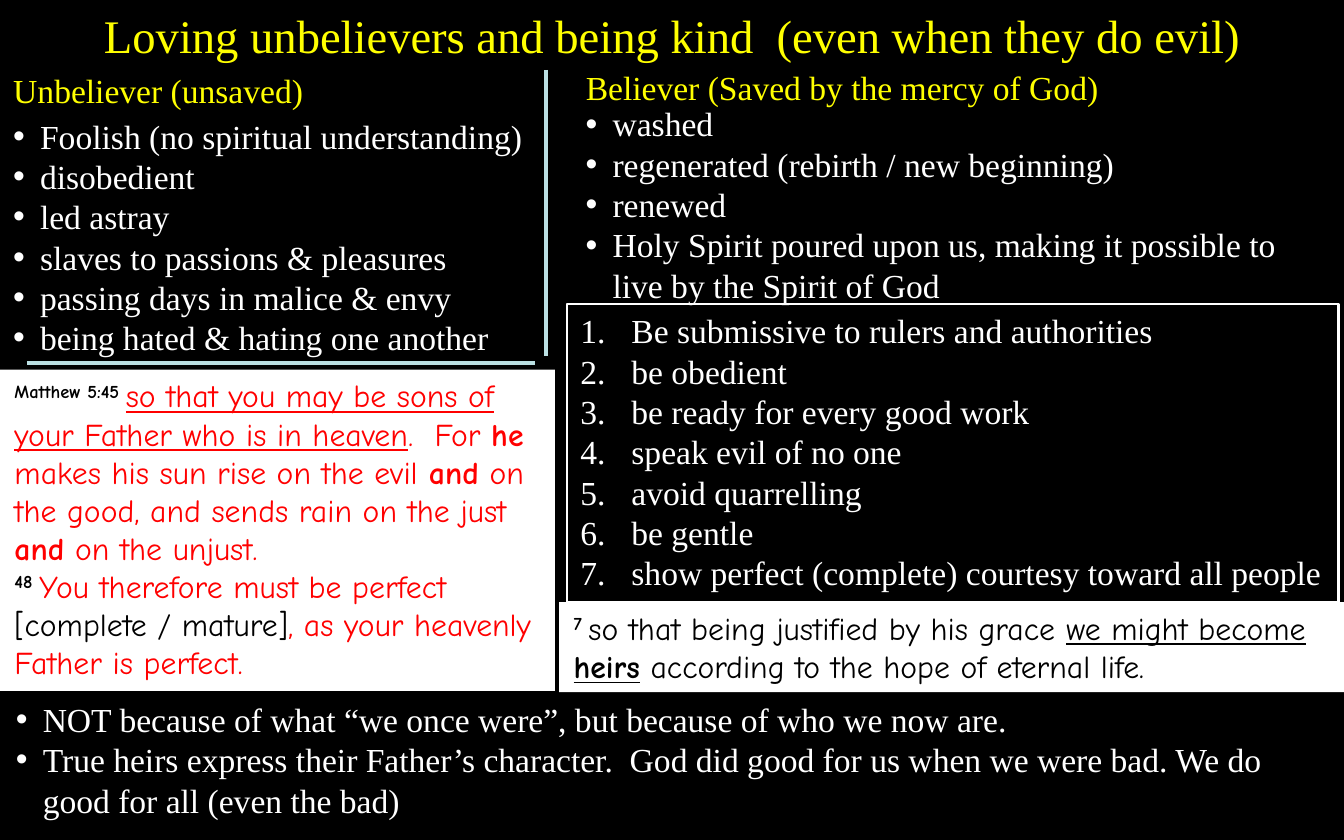
from lxml import etree
from pptx import Presentation
from pptx import util as u
from pptx.dml.color import RGBColor
from pptx.enum import shapes, text
from pptx.oxml import ns

WIDTH, HEIGHT = 10, 6.25
SERIF, COMIC = "Times New Roman", "Comic Neue"
BLACK, WHITE, YELLOW, RED, PALE = "000000", "FFFFFF", "FFFF00", "FF0000", "BBE0E3"

# Run formats for the verses
NUMBER = {"bold": True, "raised": True}
UNDER = {"underline": True}
BOLD = {"bold": True}

UNBELIEVER = ["Foolish (no spiritual understanding)", "disobedient", "led astray",
              "slaves to passions & pleasures", "passing days in malice & envy",
              "being hated & hating one another"]
BELIEVER = ["washed", "regenerated (rebirth / new beginning)", "renewed",
            "Holy Spirit poured upon us, making it possible to live by the Spirit of God"]
CONDUCT = ["Be submissive to rulers and authorities", "be obedient",
           "be ready for every good work", "speak evil of no one",
           "avoid quarrelling", "be gentle",
           "show perfect (complete) courtesy toward all people"]
REASONS = ["NOT because of what “we once were”, but because of who we now are.",
           "True heirs express their Father’s character.  God did good for us "
           "when we were bad. We do good for all (even the bad)"]
MATTHEW = [
    [("Matthew 5:45\u00a0", BLACK, NUMBER),
     ("so that you may be sons of your Father who is in heaven", RED, UNDER),
     (".  For ", RED, {}), ("he", RED, BOLD),
     (" makes his sun rise on the evil ", RED, {}), ("and", RED, BOLD),
     (" on the good, and sends rain on the just ", RED, {}), ("and", RED, BOLD),
     (" on the unjust.", RED, {})],
    [("48\u00a0", BLACK, NUMBER), ("You therefore must be perfect ", RED, {}),
     ("[complete / mature]", BLACK, {}),
     (", as your heavenly Father is perfect.", RED, {})]]
TITUS = [
    [("7\u00a0", BLACK, NUMBER), ("so that being justified by his grace ", BLACK, {}),
     ("we might become ", BLACK, UNDER), ("heirs", BLACK, {**UNDER, **BOLD}),
     (" according to the hope of eternal life.", BLACK, {})]]


def color(hex_string):
    return RGBColor.from_string(hex_string)


def inches(box):
    return [u.Inches(value) for value in box]


def add_run(paragraph, words, size, face, ink, style):
    run = paragraph.add_run()
    run.text = words
    run.font.color.rgb = color(ink)
    for name, value in {"size": u.Pt(size), "name": face, **style}.items():
        if name == "raised":
            run.font._element.set("baseline", "30000")
        else:
            setattr(run.font, name, value)


def indent(paragraph, left, first, bullet=None):
    props = paragraph._p.get_or_add_pPr()
    props.set("marL", str(u.Inches(left)))
    props.set("indent", str(u.Inches(first)))
    if bullet == "1.":
        etree.SubElement(props, ns.qn("a:buAutoNum"), type="arabicPeriod")
    elif bullet:
        etree.SubElement(props, ns.qn("a:buFont"), typeface="Arial")
        etree.SubElement(props, ns.qn("a:buChar"), char=bullet)


def fill_paragraphs(frame, count):
    """Ready the frame for left-aligned, wrapped text and yield its paragraphs."""
    layout = {"word_wrap": True, "vertical_anchor": text.MSO_ANCHOR.TOP,
              "auto_size": text.MSO_AUTO_SIZE.NONE}
    for name, value in layout.items():
        setattr(frame, name, value)
    for index in range(count):
        paragraph = frame.paragraphs[0] if index == 0 else frame.add_paragraph()
        paragraph.alignment = text.PP_ALIGN.LEFT
        yield paragraph


def heading(slide, box, words, size=18, align=text.PP_ALIGN.LEFT):
    frame = slide.shapes.add_textbox(*inches(box)).text_frame
    for paragraph in fill_paragraphs(frame, 1):
        paragraph.alignment = align
        indent(paragraph, 0.35, -0.35)
        add_run(paragraph, words, size, SERIF, YELLOW, {})


def points(frame, items, bullet="•", hang=0.2):
    for paragraph, item in zip(fill_paragraphs(frame, len(items)), items):
        indent(paragraph, hang, -hang, bullet)
        add_run(paragraph, item, 18, SERIF, WHITE, {})


def bullet_list(slide, box, items):
    points(slide.shapes.add_textbox(*inches(box)).text_frame, items)


def panel(slide, box):
    rect = slide.shapes.add_shape(shapes.MSO_SHAPE.RECTANGLE, *inches(box))
    rect.shadow.inherit = False
    return rect


def verse_panel(slide, box, verses):
    rect = panel(slide, box)
    rect.fill.solid()
    rect.fill.fore_color.rgb = color(WHITE)
    rect.line.fill.background()
    for paragraph, verse in zip(fill_paragraphs(rect.text_frame, len(verses)), verses):
        indent(paragraph, 0.01, 0)
        for words, ink, style in verse:
            add_run(paragraph, words, 17, COMIC, ink, style)


def numbered_panel(slide, box, items):
    rect = panel(slide, box)
    rect.fill.background()
    rect.line.color.rgb = color(WHITE)
    rect.line.width = u.Pt(1.25)
    points(rect.text_frame, items, "1.", 0.38)


def divider(slide, *ends):
    line = slide.shapes.add_connector(shapes.MSO_CONNECTOR.STRAIGHT, *inches(ends))
    line.line.color.rgb = color(PALE)
    line.line.width = u.Pt(2)
    effects = etree.SubElement(line._element.spPr, ns.qn("a:effectLst"))
    shadow = etree.SubElement(effects, ns.qn("a:outerShdw"), blurRad=str(u.Pt(3.1)),
                              dist=str(u.Pt(1.6)), dir="5400000", rotWithShape="0")
    tint = etree.SubElement(shadow, ns.qn("a:srgbClr"), val=BLACK)
    etree.SubElement(tint, ns.qn("a:alpha"), val="38000")


def unbeliever_column(slide, left, top, width):
    heading(slide, (left, top, 2.72, 0.4), "Unbeliever (unsaved)")
    bullet_list(slide, (left, top + 0.34, width, 1.92), UNBELIEVER)
    divider(slide, left + width, top + 0.05, left + width, top + 2.18)
    divider(slide, left + 0.2, top + 2.23, left + width - 0.08, top + 2.23)
    verse_panel(slide, (left, top + 2.28, width + 0.07, 2.39), MATTHEW)


def believer_column(slide, left, top, width):
    numbered_panel(slide, (left - 0.04, top + 1.81, width, 2.22), CONDUCT)
    heading(slide, (left, top, 4.52, 0.4), "Believer (Saved by the mercy of God)")
    bullet_list(slide, (left, top + 0.27, width, 1.62), BELIEVER)
    verse_panel(slide, (left - 0.1, top + 4.03, width + 0.13, 0.67), TITUS)


def main():
    deck = Presentation()
    deck.slide_width, deck.slide_height = inches((WIDTH, HEIGHT))
    slide = deck.slides.add_slide(deck.slide_layouts[6])
    slide.background.fill.solid()
    slide.background.fill.fore_color.rgb = color(BLACK)

    # Title, two columns, closing reasons
    heading(slide, (0, 0, WIDTH, 0.52), size=25, align=text.PP_ALIGN.CENTER,
            words="Loving unbelievers and being kind  (even when they do evil)")
    unbeliever_column(slide, 0, 0.47, 4.06)
    believer_column(slide, 4.26, 0.45, 5.74)
    bullet_list(slide, (0.02, 5.15, WIDTH, 1.01), REASONS)
    deck.save("out.pptx")


if __name__ == "__main__":
    main()
